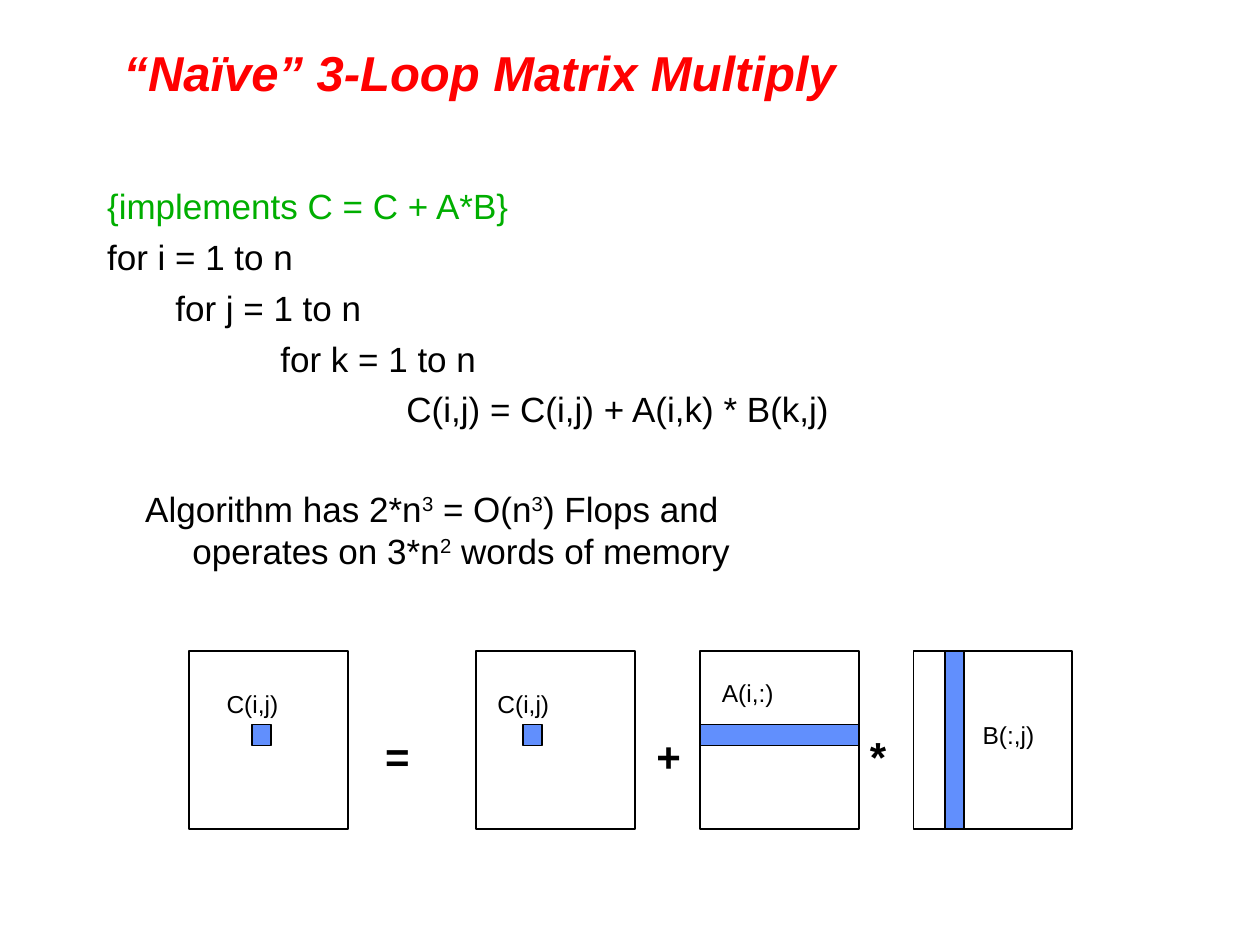
import pptx
import pptx.dml.color
import pptx.enum.shapes
import pptx.enum.text
import pptx.oxml
import pptx.oxml.ns
import pptx.util

Pt = pptx.util.Pt
Align = pptx.enum.text.PP_ALIGN
Anchor = pptx.enum.text.MSO_ANCHOR
Fit = pptx.enum.text.MSO_AUTO_SIZE

BLACK, RED, GREEN, BLUE = "000000", "FF0000", "00AE00", "618FFD"


def color(value):
    return pptx.dml.color.RGBColor.from_string(value)


def set_formats(target, formats):
    for name, value in formats.items():
        setattr(target, name, value)


class SlideBuilder:
    font = "Arial"
    line_width = 1

    def __init__(self, page):
        self.page = page

    def place(self, shape, left, top, width, height):
        set_formats(shape, dict(left=Pt(left), top=Pt(top), width=Pt(width), height=Pt(height)))

    def frame(self, shape, inset=(7.2, 3.6), anchor=Anchor.TOP):
        side, edge = map(Pt, inset)
        set_formats(shape.text_frame, dict(
            word_wrap=True, auto_size=Fit.NONE, vertical_anchor=anchor,
            margin_left=side, margin_right=side, margin_top=edge, margin_bottom=edge))
        return shape.text_frame

    def add_span(self, para, text, size, fill=BLACK, bold=False, italic=False, raised=False):
        span = para.add_run()
        span.text = text
        set_formats(span.font, dict(name=self.font, size=Pt(size), bold=bold, italic=italic))
        span.font.color.rgb = color(fill)
        if raised:
            span._r.get_or_add_rPr().set("baseline", "30000")

    def indent(self, para, left, first=0):
        settings = para._p.get_or_add_pPr()
        settings.set("marL", str(Pt(left)))
        settings.set("indent", str(Pt(first)))

    def title(self, text, area):
        shape = self.page.shapes.title
        self.place(shape, *area)
        para = self.frame(shape, anchor=Anchor.MIDDLE).paragraphs[0]
        para.alignment = Align.LEFT
        self.add_span(para, text, 28, RED, bold=True, italic=True)

    def code(self, lines, area):
        shape = self.page.placeholders[1]
        self.place(shape, *area)
        frame = self.frame(shape)
        for number, (text, left, fill) in enumerate(lines):
            para = frame.add_paragraph() if number else frame.paragraphs[0]
            para.space_before = Pt(5)
            self.indent(para, left)
            para._p.get_or_add_pPr().append(
                pptx.oxml.parse_xml(f'<a:buNone {pptx.oxml.ns.nsdecls("a")}/>'))
            self.add_span(para, text, 20, fill)

    def label(self, text, area, size, bold=False):
        box = self.page.shapes.add_textbox(*map(Pt, area))
        self.add_span(self.frame(box).paragraphs[0], text, size, bold=bold)

    def note(self, parts, area):
        box = self.page.shapes.add_textbox(*map(Pt, area))
        para = self.frame(box, inset=(5, 2.5)).paragraphs[0]
        self.indent(para, 27, -27)
        for text, raised in parts:
            self.add_span(para, text, 20, raised=raised)

    def rectangle(self, area, fill=None):
        shape = self.page.shapes.add_shape(
            pptx.enum.shapes.MSO_SHAPE.RECTANGLE, *map(Pt, area))
        shape.shadow.inherit = False
        if fill:
            shape.fill.solid()
            shape.fill.fore_color.rgb = color(fill)
        else:
            shape.fill.background()
        shape.line.color.rgb = color(BLACK)
        shape.line.width = Pt(self.line_width)


def main():
    deck = pptx.Presentation()
    set_formats(deck, dict(slide_width=Pt(720), slide_height=Pt(540)))
    builder = SlideBuilder(deck.slides.add_slide(deck.slide_layouts[1]))

    # Title and nested loops
    builder.title("“Naïve” 3-Loop Matrix Multiply", (63.4, 24.5, 446.4, 33))
    builder.code([
        ("{implements C = C + A*B}", 0, GREEN),
        ("for i = 1 to n", 0, BLACK),
        ("for j = 1 to n", 39, BLACK),
        ("for k = 1 to n", 99, BLACK),
        ("C(i,j) = C(i,j) + A(i,k) * B(k,j)", 171, BLACK),
    ], (54, 102, 642, 420))

    # Matrices
    top, width, height = 372, 90.7, 102
    result, start, left_factor, right_factor = 108, 272, 400, 522
    for left in (result, start, left_factor, right_factor):
        builder.rectangle((left, top, width, height))

    # Operators
    row = 414
    for sign, left, room in (("=", 213, 42), ("+", 368, 22), ("*", 490, 20)):
        builder.label(sign, (left, row, room, 36), 24, bold=True)

    # Highlighted cells, row and column
    cell_width, cell_height = 10.8, 12
    for area in (
        (144, row, cell_width, cell_height),
        (298.8, row, cell_width, cell_height),
        (left_factor, row, width, cell_height),
        (540, top, cell_width, height),
    ):
        builder.rectangle(area, BLUE)

    # Matrix labels
    for text, left, label_top in (
        ("C(i,j)", 122.4, 390), ("C(i,j)", 277.2, 390),
        ("A(i,:)", 405.4, 384), ("B(:,j)", 554.4, 408),
    ):
        builder.label(text, (left, label_top, 53.3, 24), 14)

    # Operation count
    builder.note([
        ("Algorithm has 2*n", False), ("3", True), (" = O(n", False), ("3", True),
        (") Flops and operates on 3*n", False), ("2", True), (" words of memory", False),
    ], (78, 276, 371, 52))

    deck.save("out.pptx")


if __name__ == "__main__":
    main()
